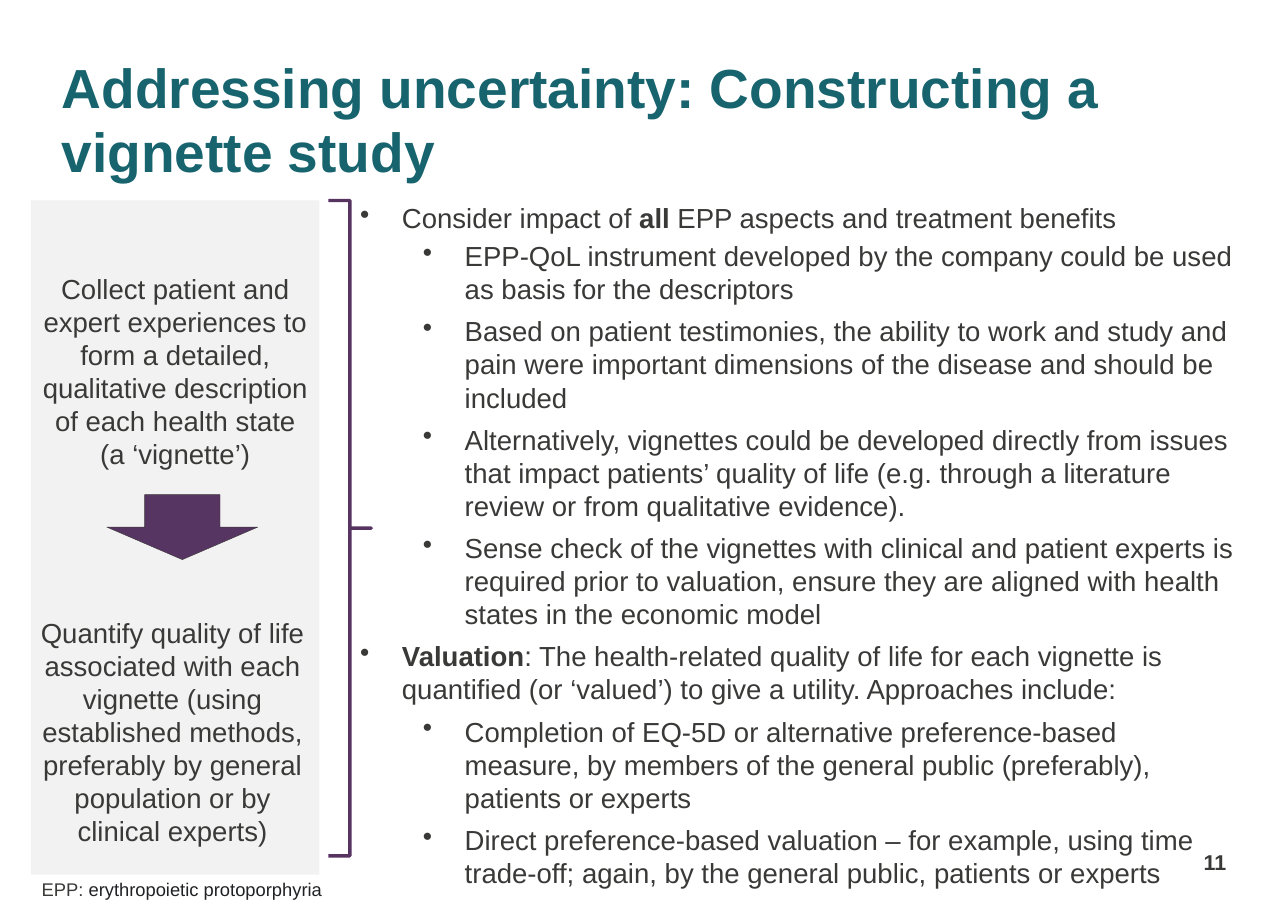
from pptx import Presentation
from pptx.dml.color import RGBColor
from pptx.enum.shapes import MSO_SHAPE as Shape
from pptx.enum.text import MSO_ANCHOR as Anchor, PP_ALIGN as Align
from pptx.oxml.ns import qn
from pptx.util import Inches, Pt
from lxml import etree

COLORS = {"title": "18646E", "text": "393938", "panel": "F2F2F2",
          "arrow": "573562", "brace": "563361", "note": "202124"}


def color(name):
    return RGBColor.from_string(COLORS[name])


def add_text(left, top, width, height, paragraphs, size=18, tint="text",
             bold=False, align=Align.LEFT, anchor=Anchor.MIDDLE, inset=True):
    """Add a text box; each paragraph is a list of (text, bold, colour) runs."""
    frame = slide.shapes.add_textbox(
        Inches(left), Inches(top), Inches(width), Inches(height)).text_frame
    frame.word_wrap = True
    frame.vertical_anchor = anchor
    if not inset:
        frame.margin_left = frame.margin_right = 0
        frame.margin_top = frame.margin_bottom = 0
    for i, runs in enumerate(paragraphs):
        paragraph = frame.add_paragraph() if i else frame.paragraphs[0]
        paragraph.alignment = align
        for text, run_bold, run_tint in runs:
            run = paragraph.add_run()
            run.text = text
            if run_bold:
                run.font.bold = True
            if run_tint:
                run.font.color.rgb = color(run_tint)
        font = paragraph.font
        font.name, font.size, font.bold = "Arial", Pt(size), bold
        font.color.rgb = color(tint)
    return frame


prs = Presentation()
prs.slide_width, prs.slide_height = Inches(11.69), Inches(8.27)
slide = prs.slides.add_slide(prs.slide_layouts[6])

# Grey panel behind the two steps
panel = slide.shapes.add_shape(
    Shape.RECTANGLE, Inches(0.28), Inches(1.82), Inches(2.62), Inches(6.12))
panel.shadow.inherit = False
panel.fill.solid()
panel.fill.fore_color.rgb = color("panel")
panel.line.fill.background()

# Title and slide number
title = add_text(
    0.56, 0.5, 10.57, 0.84,
    [[("Addressing uncertainty: Constructing a vignette study", False, None)]],
    size=36, tint="title", bold=True, anchor=Anchor.TOP, inset=False)
title.paragraphs[0].line_spacing = Pt(42)
add_text(10.58, 7.58, 0.55, 0.36, [[("11", False, None)]], size=14, bold=True,
         align=Align.RIGHT, anchor=Anchor.BOTTOM, inset=False)

# The two steps and the arrow between them
steps = [
    (0.28, 2.51, 2.62, "Collect patient and expert experiences to form a detailed, "
     "qualitative description of each health state (a ‘vignette’)"),
    (0.17, 5.78, 2.79, "Quantify quality of life associated with each vignette (using "
     "established methods, preferably by general population or by clinical experts)"),
]
for left, top, width, step in steps:
    add_text(left, top, width, 1.72, [[(step, False, None)]], align=Align.CENTER)

arrow = slide.shapes.add_shape(
    Shape.DOWN_ARROW, Inches(0.97), Inches(4.49), Inches(1.37), Inches(0.59))
arrow.shadow.inherit = False
arrow.fill.solid()
arrow.fill.fore_color.rgb = color("arrow")
arrow.line.color.rgb = color("text")
arrow.line.width = Pt(0.25)

# Brace joining the steps to the details
brace = slide.shapes.add_shape(
    Shape.RIGHT_BRACE, Inches(2.98), Inches(1.82), Inches(0.39), Inches(5.95))
brace.shadow.inherit = False
brace.adjustments[0], brace.adjustments[1] = 0, 0.5
brace.fill.background()
brace.line.color.rgb = color("brace")
brace.line.width = Pt(2.25)

# Bulleted details: level, then (text, bold) runs
details = [
    (0, [("Consider impact of ", False), ("all", True),
         (" EPP aspects and treatment benefits", False)]),
    (1, [("EPP-QoL instrument developed by the company could be used as basis "
          "for the descriptors", False)]),
    (1, [("Based on patient testimonies, the ability to work and study and pain were "
          "important dimensions of the disease and should be included", False)]),
    (1, [("Alternatively, vignettes could be developed directly from issues that impact "
          "patients’ quality of life (e.g. through a literature review or from "
          "qualitative evidence).", False)]),
    (1, [("Sense check of the vignettes with clinical and patient experts is required "
          "prior to valuation, ensure they are aligned with health states in the "
          "economic model", False)]),
    (0, [("Valuation", True),
         (": The health-related quality of life for each vignette is quantified "
          "(or ‘valued’) to give a utility. Approaches include:", False)]),
    (1, [("Completion of EQ-5D or alternative preference-based measure, by members of "
          "the general public (preferably), patients or experts", False)]),
    (1, [("Direct preference-based valuation – for example, using time trade-off; "
          "again, by the general public, patients or experts", False)]),
]
detail_frame = add_text(
    3.17, 1.78, 8.13, 6.4,
    [[(text, bold, None) for text, bold in runs] for _, runs in details],
    anchor=Anchor.TOP)
for i, (paragraph, (level, _)) in enumerate(zip(detail_frame.paragraphs, details)):
    paragraph.level = level
    paragraph.space_after = Pt(6 if i else 3)
    props = paragraph._p.get_or_add_pPr()
    props.set("marL", str(Inches(0.95 if level else 0.38)))
    props.set("indent", str(Inches(-0.38)))
    bullet = etree.Element(qn("a:buChar"), char="•")
    props.find(qn("a:defRPr")).addprevious(bullet)

# Abbreviation note
add_text(0.28, 7.8, 9.23, 0.55,
         [[("EPP: ", False, None), ("erythropoietic protoporphyria", False, "note")]],
         size=12)

prs.save("out.pptx")
